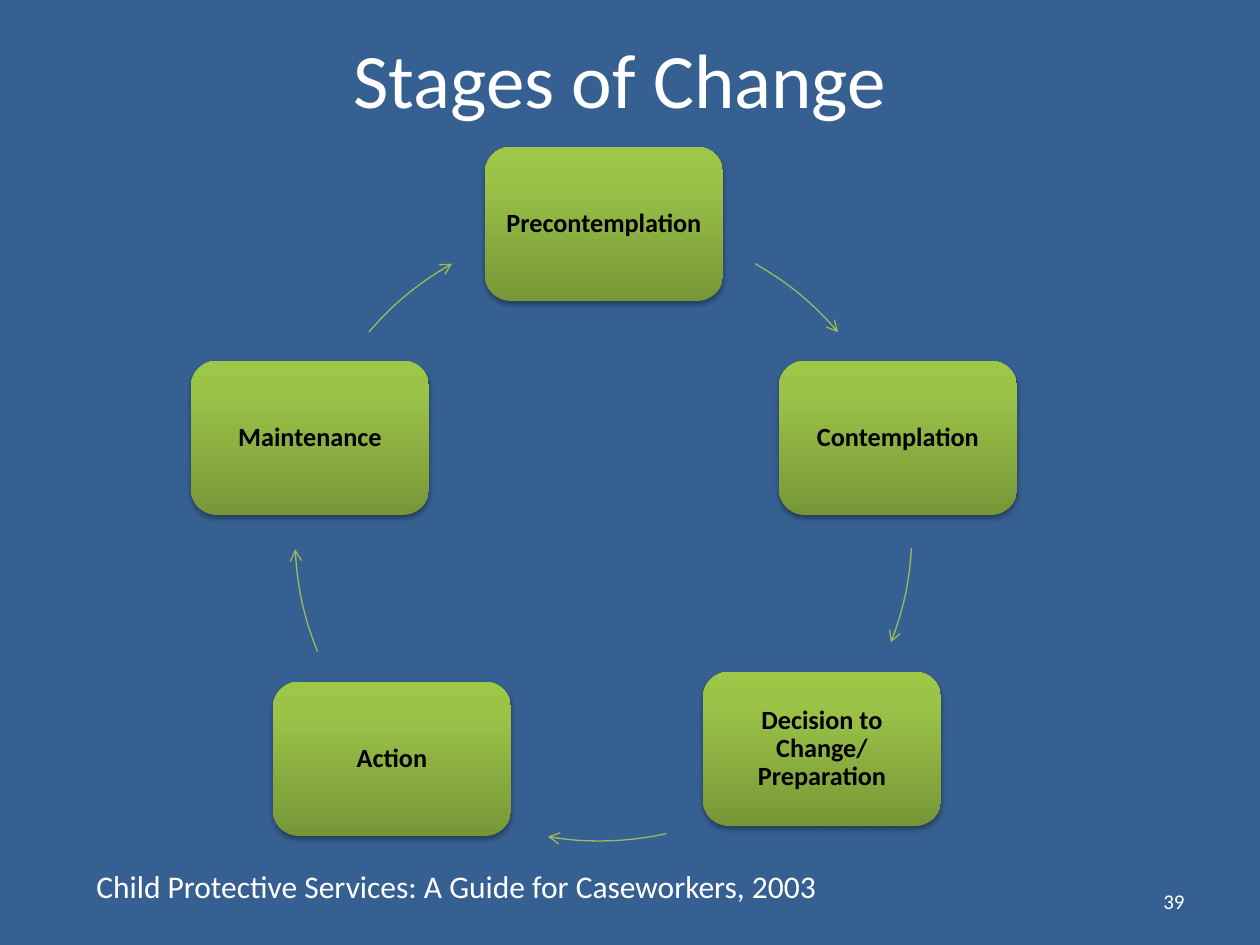
import copy

import pptx
import pptx.dml.color
import pptx.enum.shapes
import pptx.enum.text
import pptx.oxml.ns
import pptx.util
from lxml import etree

PX = 914400 / 126
FONT = "Calibri"
COLORS = {
    "back": "376092",
    "light": "FFFFFF",
    "dark": "000000",
    "arrow": "9BBB59",
    "low": "779737",
    "mid": "9BC348",
    "top": "9DC746",
}
GRADE = [(0, "low"), (0.8, "mid"), (1, "top")]
BOX = (238, 154)
RING = 617  # diameter of the circle the arrows follow
# name, left and top of its box, left and top of the ring, arrow's start and end in degrees
STAGES = [
    ("Precontemplation", (485, 147), (295, 224), (299.4, 319.5)),
    ("Contemplation", (779, 361), (295, 222), (3.3, 21.3)),
    ("Decision to Change/ Preparation", (703, 672), (291, 224), (77.5, 99.6)),
    ("Action", (273, 682), (295, 227), (157.9, 177.4)),
    ("Maintenance", (191, 361), (295, 224), (220.5, 240.6)),
]
ALIGN = pptx.enum.text.PP_ALIGN
ANCHOR = pptx.enum.text.MSO_ANCHOR
SHAPE = pptx.enum.shapes.MSO_SHAPE


def emu(*sizes):
    return [round(size * PX) for size in sizes]


def tint(name):
    return pptx.dml.color.RGBColor.from_string(COLORS[name])


def node(root, tag, **attrs):
    """Add a drawing element below root."""
    return etree.SubElement(root, pptx.oxml.ns.qn(tag), attrs)


def write(shape, text, size, color="light", bold=False, align=ALIGN.LEFT,
          anchor=ANCHOR.MIDDLE, wrap=True, inset=None, space=None):
    frame = shape.text_frame
    frame.word_wrap = wrap
    frame.vertical_anchor = anchor
    if inset is not None:
        gap = emu(inset)[0]
        frame.margin_left = frame.margin_right = gap
        frame.margin_top = frame.margin_bottom = gap
    para = frame.paragraphs[0]
    para.alignment = align
    para.line_spacing = space
    run = para.add_run()
    run.text = text
    run.font.name = FONT
    run.font.size = pptx.util.Pt(size)
    run.font.bold = bold
    run.font.color.rgb = tint(color)


def shade(shape):
    """Fill the shape from dark at the bottom to light at the top."""
    fill = shape.fill
    fill.gradient()
    fill.gradient_angle = 90
    stops = shape.element.spPr.find(".//" + pptx.oxml.ns.qn("a:gsLst"))
    stops.append(copy.deepcopy(stops[0]))
    for stop, (place, color) in zip(fill.gradient_stops, GRADE):
        stop.position = place
        stop.color.rgb = tint(color)


def drop(shape):
    """Give the shape a soft shadow below it."""
    shape.shadow.inherit = False
    effects = shape.element.spPr.find(pptx.oxml.ns.qn("a:effectLst"))
    shadow = node(effects, "a:outerShdw", blurRad=str(pptx.util.Pt(3.1)),
                  dist=str(pptx.util.Pt(1.8)), dir="5400000", rotWithShape="0")
    node(node(shadow, "a:srgbClr", val=COLORS["dark"]), "a:alpha", val="35000")


def add_stage(slide, text, spot):
    box = slide.shapes.add_shape(SHAPE.ROUNDED_RECTANGLE, *emu(*spot, *BOX))
    shade(box)
    box.line.fill.background()
    drop(box)
    write(box, text, 15, color="dark", bold=True, align=ALIGN.CENTER,
          inset=8, space=0.9)


def add_arrow(slide, spot, angles):
    arc = slide.shapes.add_shape(SHAPE.ARC, *emu(*spot, RING, RING))
    for index, angle in enumerate(angles):
        arc.adjustments[index] = angle * 0.6  # 60000 units a degree, scaled by 100000
    arc.fill.background()
    arc.line.color.rgb = tint("arrow")
    arc.line.width = pptx.util.Pt(0.75)
    arc.shadow.inherit = False
    node(arc.line._get_or_add_ln(), "a:tailEnd", type="arrow")


def add_label(slide, text, size, place, **style):
    write(slide.shapes.add_textbox(*emu(*place)), text, size, **style)


def add_title(slide, text):
    title = slide.shapes.title
    title.left, title.top, title.width, title.height = emu(53, -1, 1134, 158)
    write(title, text, 44, align=ALIGN.CENTER)


def main():
    deck = pptx.Presentation()
    deck.slide_width, deck.slide_height = emu(1260, 945)
    slide = deck.slides.add_slide(deck.slide_layouts[5])
    slide.background.fill.solid()
    slide.background.fill.fore_color.rgb = tint("back")
    add_title(slide, "Stages of Change")
    add_label(slide, "39", 12, (903, 876, 294, 50), align=ALIGN.RIGHT)
    for name, spot, ring, angles in STAGES:
        add_stage(slide, name, spot)
        add_arrow(slide, ring, angles)
    add_label(slide, "Child Protective Services: A Guide for Caseworkers, 2003", 18,
              (84, 861, 756, 50), anchor=ANCHOR.TOP, wrap=False)
    deck.save("out.pptx")


if __name__ == "__main__":
    main()
